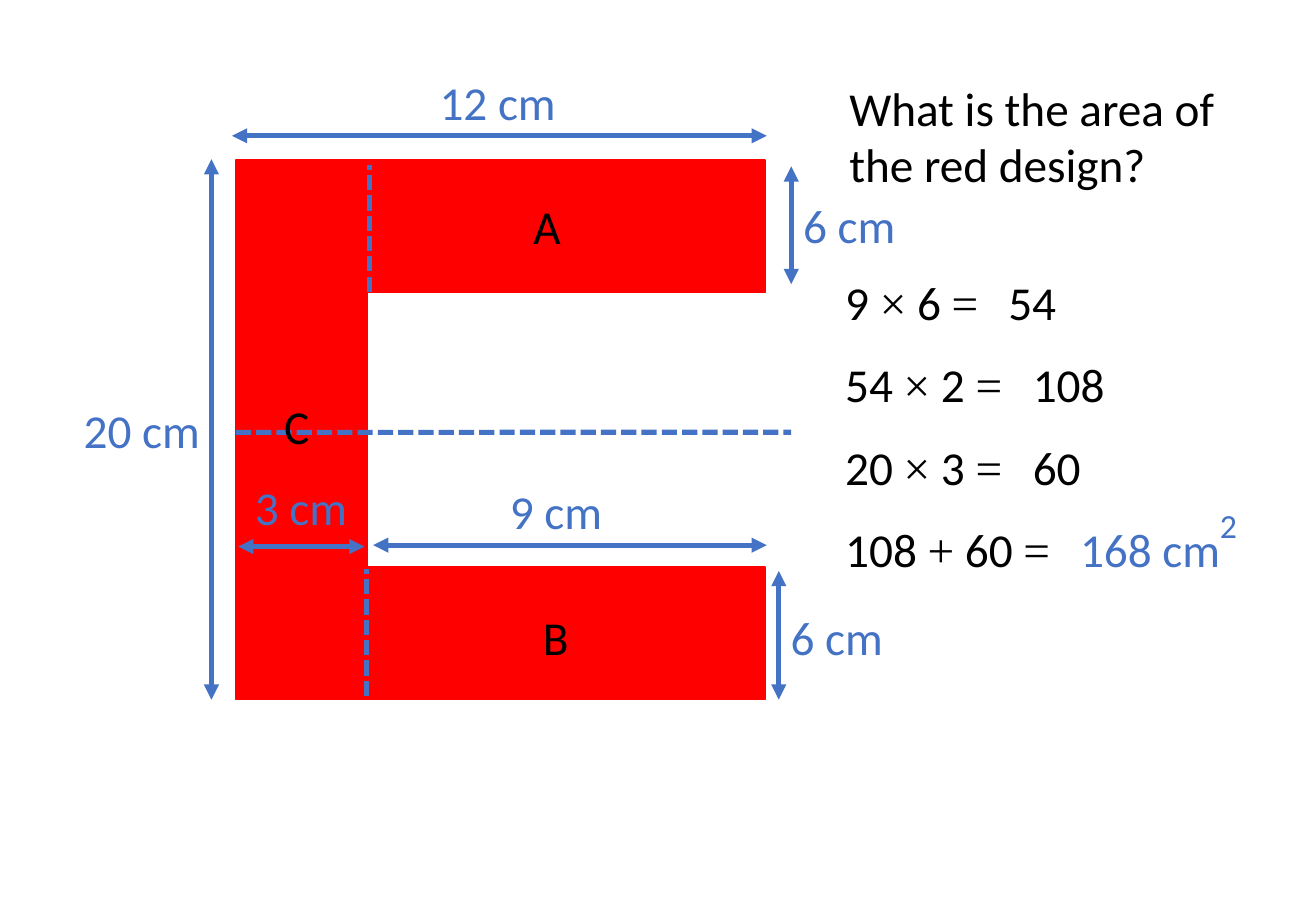
from lxml import etree
from pptx import Presentation
from pptx.dml.color import RGBColor
from pptx.enum.dml import MSO_LINE
from pptx.enum.shapes import MSO_CONNECTOR, MSO_SHAPE
from pptx.enum.text import MSO_ANCHOR, MSO_AUTO_SIZE, PP_ALIGN
from pptx.oxml.ns import qn
from pptx.util import Cm, Pt

RED = RGBColor(0xFF, 0x00, 0x00)
BLUE = RGBColor(0x44, 0x72, 0xC4)
BLACK = RGBColor(0x00, 0x00, 0x00)
TEXT_FONT, SIGN_FONT = "Calibri", "Times New Roman"

# Content, lengths in cm
QUESTION = "What is the area of the red design?"
BARS = {  # left, top, width, height
    "A": (4.93, 3.35, 11.07, 2.77),
    "C": (4.93, 3.45, 2.74, 11.18),
    "B": (5.46, 11.86, 10.54, 2.77),
}
DIMENSIONS = [  # label, label corner, arrow from, arrow to
    ("12 cm", (8.94, 1.4), (4.85, 2.84), (16.03, 2.84)),
    ("20 cm", (1.5, 8.26), (4.42, 14.63), (4.42, 3.33)),
    ("9 cm", (10.41, 9.96), (7.8, 11.4), (16.03, 11.4)),
    ("6 cm", (16.54, 3.99), (16.54, 5.94), (16.54, 3.48)),
    ("6 cm", (16.28, 12.6), (16.28, 14.63), (16.28, 11.94)),
    ("3 cm", (5.08, 9.88), (4.98, 11.43), (7.62, 11.43)),
]
MIDLINE = ((4.93, 9.04), (16.54, 9.04))
CUTS = [((7.72, 6.1), (7.72, 3.45)), ((7.67, 14.55), (7.67, 11.89))]
BAR_LABELS = [("A", 10.9, 4.01), ("B", 11.1, 12.6), ("C", 5.69, 8.18)]
SUMS = [  # first number, sign, second number, answer, answer left, colour
    ("9", "×", "6", "54", 20.83, BLACK),
    ("54", "×", "2", "108", 21.34, BLACK),
    ("20", "×", "3", "60", 21.34, BLACK),
    ("108", "+", "60", "168 cm", 22.33, BLUE),
]
SUM_LEFT, SUM_TOP, SUM_STEP = 17.42, 5.59, 1.72
SQUARE = ("2", 25.25, 10.44)

prs = Presentation()
prs.slide_width, prs.slide_height = Cm(27.51), Cm(19.05)
slide = prs.slides.add_slide(prs.slide_layouts[5])
shapes = slide.shapes


def add_label(runs, left, top, width, color=BLACK, size=28):
    """Add one line of text made of (text, font name) runs."""
    box = shapes.add_textbox(Cm(left), Cm(top), Cm(width), Cm(size * 0.052))
    box.text_frame.word_wrap = True
    line = box.text_frame.paragraphs[0]
    line.font.size = Pt(size)
    line.font.color.rgb = color
    for text, font_name in runs:
        run = line.add_run()
        run.text = text
        run.font.name = font_name


def add_line(start, end, dashed=False):
    """Add a dashed line, or a solid one with an arrowhead at each end."""
    line = shapes.add_connector(MSO_CONNECTOR.STRAIGHT,
                                *(Cm(v) for v in start + end))
    line.line.color.rgb = BLUE
    line.line.width = Pt(3)
    if dashed:
        line.line.dash_style = MSO_LINE.SQUARE_DOT
    else:
        for tag in ("a:headEnd", "a:tailEnd"):
            etree.SubElement(line.line._get_or_add_ln(), qn(tag), type="triangle")
    etree.SubElement(line._element.spPr, qn("a:effectLst"))
    return line


# Question
question = shapes.title
question.left, question.top = Cm(17.5), Cm(1.52)
question.width, question.height = Cm(9.58), Cm(2.64)
frame = question.text_frame
frame.text = QUESTION
frame.word_wrap = True
frame.auto_size = MSO_AUTO_SIZE.NONE
frame.vertical_anchor = MSO_ANCHOR.TOP
heading = frame.paragraphs[0]
heading.alignment = PP_ALIGN.LEFT
heading.font.name = TEXT_FONT
heading.font.size = Pt(28)
heading.font.color.rgb = BLACK

# Red design
bars = {}
for name, place in BARS.items():
    bar = shapes.add_shape(MSO_SHAPE.RECTANGLE, *(Cm(v) for v in place))
    bar.shadow.inherit = False
    bar.fill.solid()
    bar.fill.fore_color.rgb = RED
    bar.line.color.rgb = RED
    bar.line.width = Pt(1)
    bars[name] = bar

# Dashed lines: the middle and the two cuts
add_line(*MIDLINE, dashed=True).begin_connect(bars["C"], 1)
for start, end in CUTS:
    add_line(start, end, dashed=True)

# Dimensions
for text, (left, top), start, end in DIMENSIONS:
    add_line(start, end)
    add_label([(text, TEXT_FONT)], left, top, 2.97, BLUE)

# Names of the parts
for text, left, top in BAR_LABELS:
    add_label([(text, TEXT_FONT)], left, top, 2.24)

# Working out
for row, (first, sign, second, answer, left, color) in enumerate(SUMS):
    top = SUM_TOP + row * SUM_STEP
    add_label([(f"{first} ", TEXT_FONT), (sign, SIGN_FONT),
               (f" {second} ", TEXT_FONT), ("=", SIGN_FONT)],
              SUM_LEFT, top, 5.35)
    add_label([(answer, TEXT_FONT)], left, top, 4.1, color)
text, left, top = SQUARE
add_label([(text, TEXT_FONT)], left, top, 1.5, BLUE, size=20)

prs.save("out.pptx")
